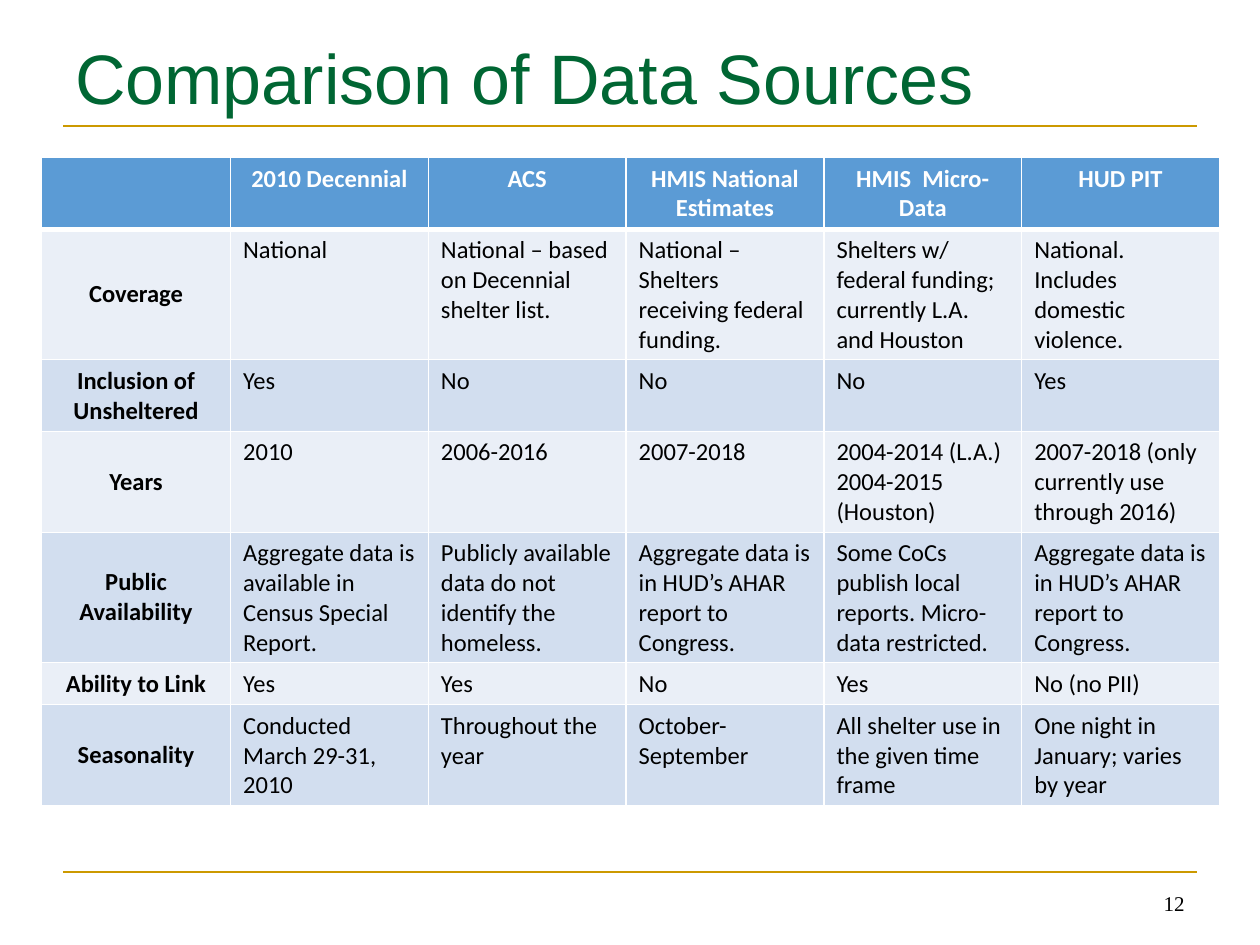
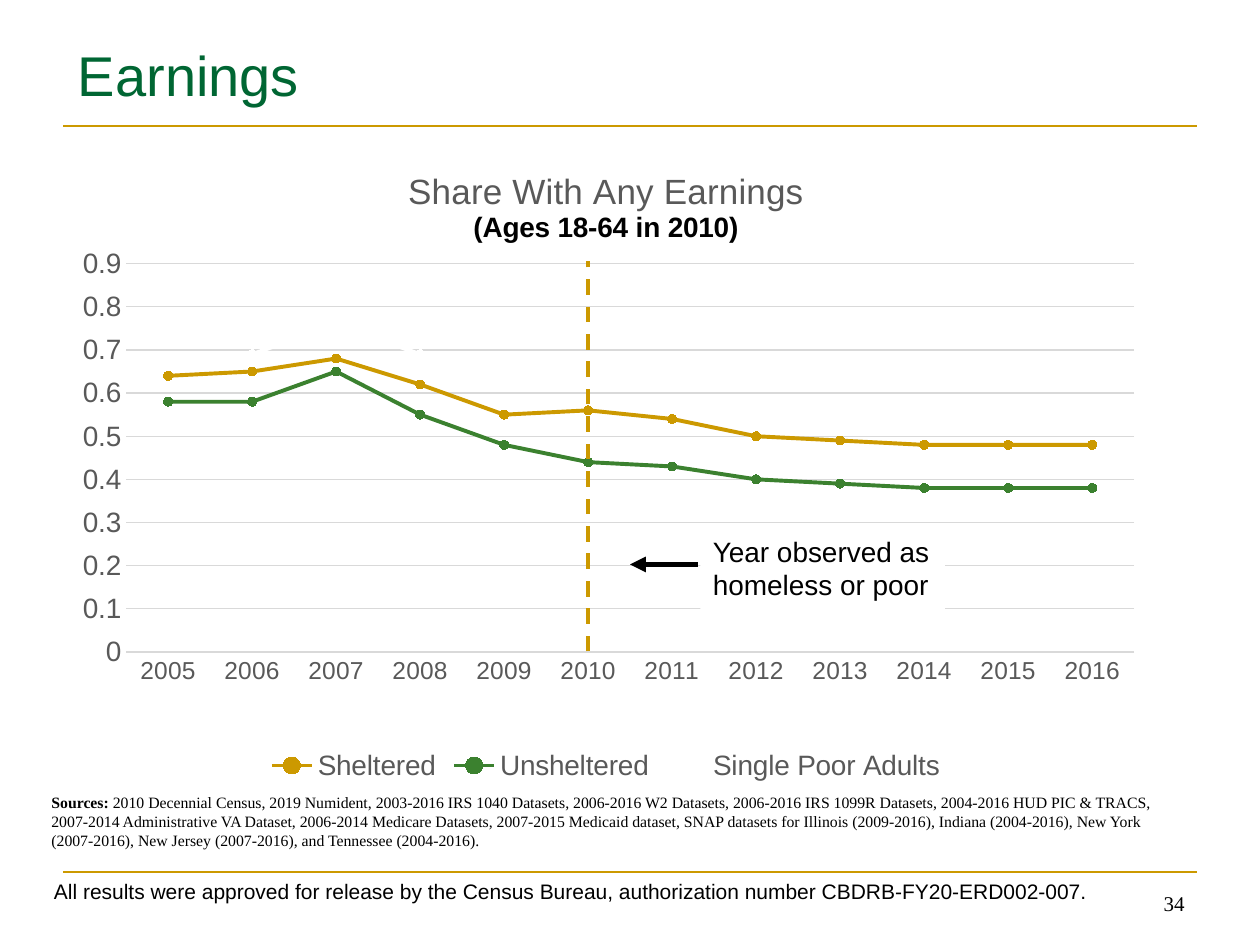
from dataclasses import dataclass

from lxml.etree import SubElement
from pptx import Presentation
from pptx.chart.data import CategoryChartData
from pptx.dml.color import RGBColor
from pptx.enum.chart import XL_CHART_TYPE, XL_LEGEND_POSITION, XL_MARKER_STYLE, XL_TICK_MARK
from pptx.enum.dml import MSO_LINE
from pptx.enum.shapes import MSO_CONNECTOR, MSO_SHAPE
from pptx.enum.text import MSO_ANCHOR, PP_ALIGN
from pptx.oxml import parse_xml
from pptx.oxml.ns import nsdecls, qn
from pptx.util import Inches, Pt

COLORS = {
    "white": "FFFFFF", "black": "000000", "gold": "CC9900", "title": "006633",
    "green": "3B812F", "gray": "595959", "grid": "D9D9D9",
    "header": "5B9BD5", "band_light": "EAEFF7", "band_dark": "D2DEEF",
}


@dataclass(frozen=True)
class Style:
    size: float
    font: str = "Arial"
    color: str = "black"
    bold: bool = False


@dataclass(frozen=True)
class Box:
    left: float
    top: float
    width: float
    height: float

    def lengths(self) -> tuple:
        return tuple(Inches(v) for v in (self.left, self.top, self.width, self.height))


@dataclass(frozen=True)
class Line:
    start: tuple[float, float]
    end: tuple[float, float]
    width: float = 1.5
    color: str = "gold"
    dashed: bool = False
    arrow: bool = False


@dataclass(frozen=True)
class Series:
    name: str
    color: str
    values: tuple[float, ...]


RULES = (Line((0.5, 6.92), (9.5, 6.92)), Line((0.5, 1), (9.5, 1)))
NUMBER_BOX = Box(7.17, 7.08, 2.33, 0.24)
NUMBER_STYLE = Style(12, "Times New Roman")

# Comparison table
COLUMN_WIDTHS = [1.5] + [1.57] * 5
ROW_HEIGHTS = [0.57, 1.03, 0.57, 0.8, 1.03, 0.33, 0.8]
AHAR = "Aggregate data is in HUD’s AHAR report to Congress."
COMPARISON = [
    ["", "2010 Decennial", "ACS", "HMIS National Estimates", "HMIS  Micro-Data", "HUD PIT"],
    ["Coverage", "National", "National – based on Decennial shelter list.",
     "National – Shelters receiving federal funding.",
     "Shelters w/ federal funding; currently L.A. and Houston",
     "National. Includes domestic violence."],
    ["Inclusion of Unsheltered", "Yes", "No", "No", "No", "Yes"],
    ["Years", "2010", "2006-2016", "2007-2018", "2004-2014 (L.A.) 2004-2015 (Houston)",
     "2007-2018 (only currently use through 2016)"],
    ["Public Availability", "Aggregate data is available in Census Special Report.",
     "Publicly available data do not identify the homeless.", AHAR,
     "Some CoCs publish local reports. Micro-data restricted.", AHAR],
    ["Ability to Link", "Yes", "Yes", "No", "Yes", "No (no PII)"],
    ["Seasonality", "Conducted March 29-31, 2010", "Throughout the year",
     "October-September", "All shelter use in the given time frame",
     "One night in January; varies by year"],
]

# Earnings chart
YEARS = [str(year) for year in range(2005, 2017)]
EARNINGS = (
    Series("Sheltered", "gold",
           (0.64, 0.65, 0.68, 0.62, 0.55, 0.56, 0.54, 0.5, 0.49, 0.48, 0.48, 0.48)),
    Series("Unsheltered", "green",
           (0.58, 0.58, 0.65, 0.55, 0.48, 0.44, 0.43, 0.4, 0.39, 0.38, 0.38, 0.38)),
    Series("Single Poor Adults", "white",
           (0.67, 0.69, 0.76, 0.69, 0.65, 0.62, 0.64, 0.63, 0.64, 0.64, 0.65, 0.64)),
)
PLOT_AREA = {"x": 0.073, "y": 0.182, "w": 0.897, "h": 0.608}
SOURCES = (
    "2010 Decennial Census, 2019 Numident, 2003-2016 IRS 1040 Datasets, 2006-2016 W2 Datasets, "
    "2006-2016 IRS 1099R Datasets, 2004-2016 HUD PIC & TRACS, 2007-2014 Administrative VA Dataset, "
    "2006-2014 Medicare Datasets, 2007-2015 Medicaid dataset, SNAP datasets for Illinois "
    "(2009-2016), Indiana (2004-2016), New York (2007-2016), New Jersey (2007-2016), and "
    "Tennessee (2004-2016)."
)


def rgb(name: str) -> RGBColor:
    return RGBColor.from_string(COLORS[name])


def apply_font(font, style: Style) -> None:
    font.size, font.name, font.bold = Pt(style.size), style.font, style.bold
    font.color.rgb = rgb(style.color)


def add_run(paragraph, text: str, style: Style) -> None:
    run = paragraph.add_run()
    run.text = text
    apply_font(run.font, style)


def add_text(slide, box: Box, runs: list[tuple[str, Style]], align=PP_ALIGN.LEFT,
             anchor=MSO_ANCHOR.TOP, inset_top: float = 0.05) -> None:
    frame = slide.shapes.add_textbox(*box.lengths()).text_frame
    frame.word_wrap = True
    frame.vertical_anchor = anchor
    frame.margin_top = Inches(inset_top)
    paragraph = frame.paragraphs[0]
    paragraph.alignment = align
    for text, style in runs:
        add_run(paragraph, text, style)


def add_line(shapes, line: Line) -> None:
    points = [Inches(v) for v in (*line.start, *line.end)]
    connector = shapes.add_connector(MSO_CONNECTOR.STRAIGHT, *points)
    connector.line.color.rgb = rgb(line.color)
    connector.line.width = Pt(line.width)
    if line.dashed:
        connector.line.dash_style = MSO_LINE.DASH
    properties = connector._element.spPr
    if line.arrow:
        SubElement(properties.find(qn("a:ln")), qn("a:tailEnd"), type="triangle")
    SubElement(properties, qn("a:effectLst"))


def add_base_slide(presentation, title: str, title_box: Box, title_size: float, number: int):
    """Slide with the shared rules, title and page number."""
    slide = presentation.slides.add_slide(presentation.slide_layouts[6])
    for rule in RULES:
        add_line(slide.shapes, rule)
    add_text(slide, title_box, [(title, Style(title_size, color="title"))], inset_top=0.1)
    add_text(slide, NUMBER_BOX, [(str(number), NUMBER_STYLE)], PP_ALIGN.RIGHT, MSO_ANCHOR.BOTTOM)
    return slide


def set_borders(cell, top: float, bottom: float) -> None:
    properties = cell._tc.get_or_add_tcPr()
    for index, (side, width) in enumerate(zip("LRTB", (1, 1, top, bottom))):
        properties.insert(index, parse_xml(
            f'<a:ln{side} {nsdecls("a")} w="{Pt(width)}"><a:solidFill>'
            f'<a:srgbClr val="{COLORS["white"]}"/></a:solidFill></a:ln{side}>'))


def fill_cell(cell, text: str, row: int, column: int) -> None:
    header, label = row == 0, column == 0
    fill = "header" if header else "band_light" if row % 2 else "band_dark"
    cell.fill.solid()
    cell.fill.fore_color.rgb = rgb(fill)
    set_borders(cell, top=3 if row == 1 else 1, bottom=3 if header else 1)
    cell.vertical_anchor = MSO_ANCHOR.MIDDLE if label and not header else MSO_ANCHOR.TOP
    paragraph = cell.text_frame.paragraphs[0]
    paragraph.alignment = PP_ALIGN.CENTER if header or label else PP_ALIGN.LEFT
    if text:
        color = "white" if header else "black"
        add_run(paragraph, text, Style(14, "Calibri", color, header or label))


def add_comparison_table(slide) -> None:
    box = Box(0.33, 1.25, 9.33, 5.13)
    table = slide.shapes.add_table(len(ROW_HEIGHTS), len(COLUMN_WIDTHS), *box.lengths()).table
    table.horz_banding = False
    for column, width in zip(table.columns, COLUMN_WIDTHS):
        column.width = Inches(width)
    for row, height in zip(table.rows, ROW_HEIGHTS):
        row.height = Inches(height)
    for row, texts in enumerate(COMPARISON):
        for column, text in enumerate(texts):
            fill_cell(table.cell(row, column), text, row, column)


def add_earnings_chart(slide) -> None:
    data = CategoryChartData()
    data.categories = YEARS
    for series in EARNINGS:
        data.add_series(series.name, series.values)
    box = Box(0.35, 1.17, 8.92, 5.07)
    chart = slide.shapes.add_chart(XL_CHART_TYPE.LINE_MARKERS, *box.lengths(), data).chart
    apply_font(chart.font, Style(10))

    # Title and legend
    frame = chart.chart_title.text_frame
    add_run(frame.paragraphs[0], "Share With Any Earnings", Style(20, color="gray"))
    add_run(frame.add_paragraph(), "(Ages 18-64 in 2010)", Style(16, bold=True))
    chart.chart_title.include_in_layout = False
    chart.has_legend = True
    chart.legend.position = XL_LEGEND_POSITION.BOTTOM
    chart.legend.include_in_layout = False
    apply_font(chart.legend.font, Style(16, color="gray"))

    # Axes
    category_axis, value_axis = chart.category_axis, chart.value_axis
    for axis, size in ((category_axis, 14), (value_axis, 16)):
        axis.major_tick_mark = axis.minor_tick_mark = XL_TICK_MARK.NONE
        apply_font(axis.tick_labels.font, Style(size, color="gray"))
    value_axis.minimum_scale, value_axis.maximum_scale, value_axis.major_unit = 0, 0.9, 0.1
    value_axis.tick_labels.number_format = "General"
    value_axis.tick_labels.number_format_is_linked = False
    value_axis.format.line.fill.background()
    for line_format in (category_axis.format.line, value_axis.major_gridlines.format.line):
        line_format.color.rgb = rgb("grid")
        line_format.width = Pt(0.75)

    # Series
    plot = chart.plots[0]
    plot.vary_by_categories = False
    for drawn, series in zip(plot.series, EARNINGS):
        color = rgb(series.color)
        drawn.smooth = False
        drawn.format.line.color.rgb = color
        drawn.format.line.width = Pt(2.25)
        drawn.marker.style = XL_MARKER_STYLE.CIRCLE
        drawn.marker.size = 5
        drawn.marker.format.fill.solid()
        drawn.marker.format.fill.fore_color.rgb = color
        drawn.marker.format.line.color.rgb = color

    # Fixed inner plot area
    plot_area = chart._chartSpace.chart.plotArea
    for old_layout in plot_area.findall(qn("c:layout")):
        plot_area.remove(old_layout)
    modes = "".join(f'<c:{key}Mode val="edge"/>' for key in "xy")
    places = "".join(f'<c:{key} val="{value}"/>' for key, value in PLOT_AREA.items())
    plot_area.insert(0, parse_xml(
        f'<c:layout {nsdecls("c")}><c:manualLayout><c:layoutTarget val="inner"/>'
        f'{modes}{places}</c:manualLayout></c:layout>'))


def add_year_callout(slide) -> None:
    group = slide.shapes.add_group_shape()
    label = group.shapes.add_shape(MSO_SHAPE.RECTANGLE, *Box(5.56, 4.19, 1.94, 0.91).lengths())
    label.shadow.inherit = False
    label.fill.solid()
    label.fill.fore_color.rgb = rgb("white")
    label.line.fill.background()
    frame = label.text_frame
    frame.word_wrap = True
    frame.vertical_anchor = MSO_ANCHOR.TOP
    frame.paragraphs[0].alignment = PP_ALIGN.LEFT
    add_run(frame.paragraphs[0], "Year observed as homeless or poor", Style(16))
    add_line(group.shapes, Line((5.54, 4.48), (5, 4.48), 3, "black", arrow=True))


def main() -> None:
    presentation = Presentation()
    presentation.slide_width, presentation.slide_height = Inches(10), Inches(7.5)

    # Data sources
    slide = add_base_slide(presentation, "Comparison of Data Sources",
                           Box(0.5, 0.17, 9, 0.92), 40, 12)
    add_comparison_table(slide)

    # Earnings
    slide = add_base_slide(presentation, "Earnings", Box(0.52, 0.22, 9.12, 0.92), 32, 34)
    add_text(slide, Box(0.33, 6.92, 8.67, 0.3), [(
        "All results were approved for release by the Census Bureau, "
        "authorization number CBDRB-FY20-ERD002-007.", Style(12))])
    add_text(slide, Box(0.31, 6.24, 9, 0.56), [
        ("Sources: ", Style(9, "Times New Roman", bold=True)),
        (SOURCES, Style(9, "Times New Roman"))])
    add_earnings_chart(slide)
    add_line(slide.shapes, Line((4.67, 5.17), (4.67, 2.07), 2.25, dashed=True))
    add_year_callout(slide)

    presentation.save("out.pptx")


if __name__ == "__main__":
    main()
